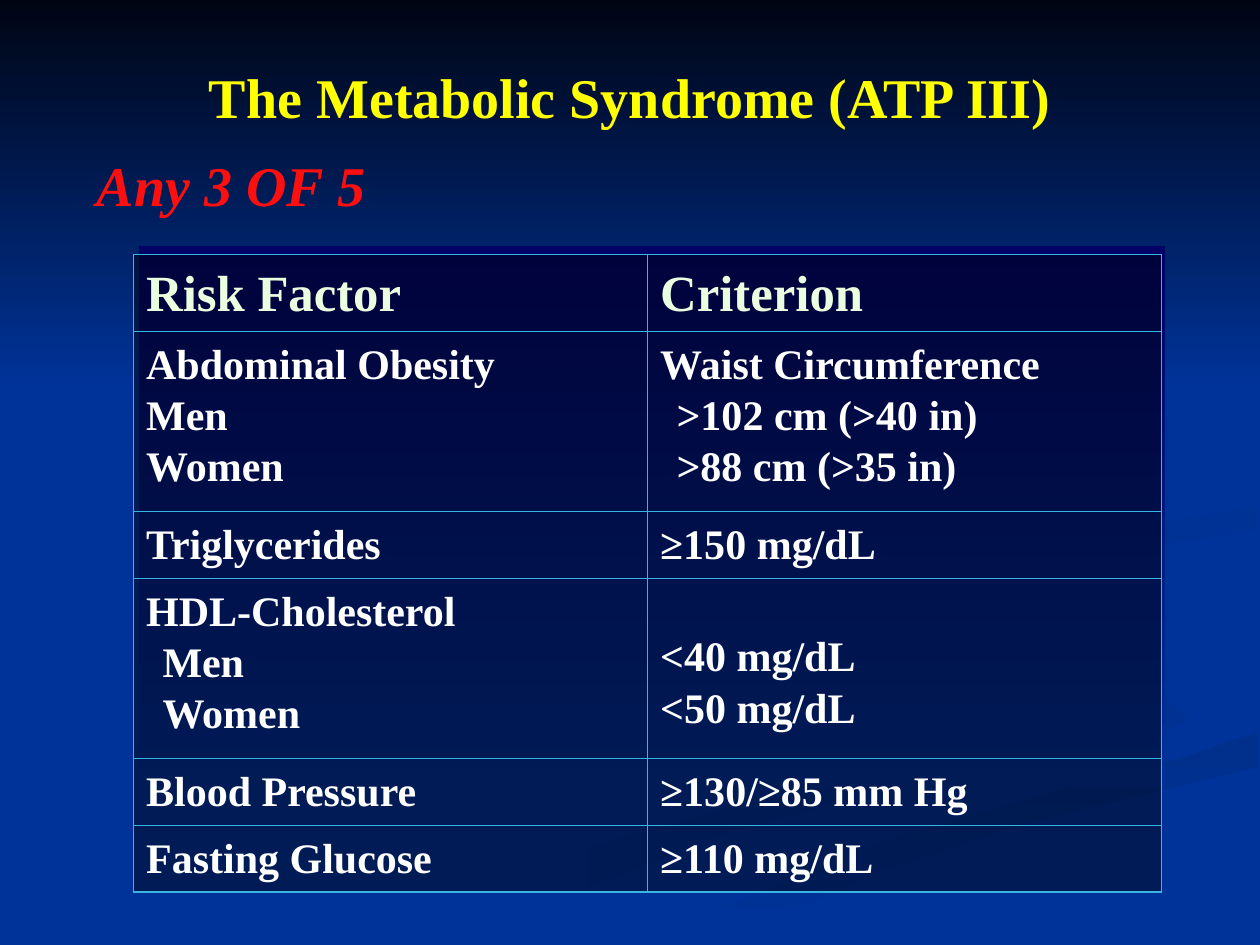
from lxml.etree import SubElement
from pptx import Presentation
from pptx.dml.color import RGBColor as Rgb
from pptx.enum.shapes import MSO_SHAPE as Shape
from pptx.enum.text import MSO_ANCHOR as Anchor, PP_ALIGN as Align
from pptx.oxml.ns import qn
from pptx.util import Pt

PX = 9144  # 100 px to the inch
FONT = "Times New Roman"
COLORS = {
    "blue": "003399", "blue_soft": "003193", "blue_mid": "003091",
    "blue_deep": "002F8C", "night": "000514", "navy": "000066",
    "border": "38B5E2", "header": "E9FFDF", "white": "FFFFFF",
    "yellow": "FFFF00", "red": "FD0F0F",
}

# Background ribbons: start colour, end colour, angle, outline
RIBBONS = [
    ("blue", "blue_soft", 0, [
        (781, 553), (575, 459), (783, 559), (739, 598), (458, 674),
        (300, 749), (361, 749), (564, 665), (780, 605), (800, 581)]),
    ("blue", "blue_soft", 45, [
        (943, 570), (905, 540), (758, 498), (724, 464), (755, 505),
        (880, 549), (918, 581), (894, 605), (932, 589)]),
    ("blue_deep", "blue", 90, [
        (503, 749), (571, 749), (695, 692), (821, 651), (998, 609),
        (998, 581), (936, 602), (764, 647), (630, 693)]),
    ("blue", "blue", 0, [
        (725, 464), (759, 498), (905, 540), (943, 570), (892, 605),
        (704, 655), (477, 749), (503, 749), (696, 669), (999, 581),
        (999, 538), (817, 492), (782, 460), (835, 430), (999, 402),
        (999, 387), (770, 427)]),
    ("blue_mid", "blue", 45, [
        (781, 460), (826, 496), (806, 468), (878, 439), (998, 420),
        (998, 402), (849, 427)]),
    ("blue_deep", "blue", 45, [
        (683, 430), (855, 391), (894, 344), (843, 275), (762, 233),
        (846, 279), (889, 335), (852, 374), (649, 420), (577, 462),
        (622, 500), (593, 470)]),
]

ROW_HEIGHTS = [61, 143, 53, 143, 53, 53]
RISK_ROWS = [
    ("Risk Factor", "Criterion"),
    ("Abdominal Obesity\nMen\nWomen",
     "Waist Circumference\n\t>102 cm (>40 in)\n\t>88 cm (>35 in)"),
    ("Triglycerides", "≥150 mg/dL"),
    ("HDL-Cholesterol\vMen\vWomen", "<40 mg/dL\n<50 mg/dL"),
    ("Blood Pressure", "≥130/≥85 mm Hg"),
    ("Fasting Glucose", "≥110 mg/dL"),
]


def rgb(name):
    return Rgb.from_string(COLORS[name])


class SlideBuilder:
    def __init__(self, slide):
        self.slide = slide
        self.shapes = slide.shapes

    def background(self, color):
        fill = self.slide.background.fill
        fill.solid()
        fill.fore_color.rgb = rgb(color)

    def paint(self, shape, start, end, angle):
        """Linear gradient with the angle measured clockwise; no outline."""
        shape.shadow.inherit = False
        shape.line.fill.background()
        shape.fill.gradient()
        shape.fill.gradient_angle = (360 - angle) % 360
        for stop, color in zip(shape.fill.gradient_stops, (start, end)):
            stop.color.rgb = rgb(color)

    def panel(self, box, start, end):
        panel = self.shapes.add_shape(Shape.RECTANGLE, *(v * PX for v in box))
        self.paint(panel, start, end, 90)

    def ribbon(self, start, end, angle, outline):
        builder = self.shapes.build_freeform(*outline[0], scale=PX)
        builder.add_line_segments(outline[1:], close=True)
        self.paint(builder.convert_to_shape(), start, end, angle)

    def style(self, paragraph, size, color, spacing, italic=None):
        font = paragraph.font
        font.name, font.size, font.bold, font.italic = FONT, Pt(size), True, italic
        font.color.rgb = rgb(color)
        paragraph.line_spacing = spacing

    def heading(self, text, box, color, spacing=1.0, italic=None, wrap=True):
        frame = self.shapes.add_textbox(*(v * PX for v in box)).text_frame
        frame.word_wrap = wrap
        frame.vertical_anchor = Anchor.MIDDLE if wrap else Anchor.TOP
        frame.text = text
        frame.paragraphs[0].alignment = Align.CENTER
        self.style(frame.paragraphs[0], 32, color, spacing, italic)

    def cell(self, cell, text, size, color):
        cell.text = text
        for paragraph in cell.text_frame.paragraphs:
            self.style(paragraph, size, color, 1.1)
            # Hanging indent: broken and tabbed lines start 13 px in
            props = paragraph._p.get_or_add_pPr()
            props.set("marL", str(13 * PX))
            props.set("indent", str(-13 * PX))

        props = cell._tc.get_or_add_tcPr()
        for side in ("a:lnL", "a:lnR", "a:lnT", "a:lnB"):
            border = SubElement(props, qn(side), w=str(Pt(1)))
            solid = SubElement(border, qn("a:solidFill"))
            SubElement(solid, qn("a:srgbClr"), val=COLORS["border"])
        # Half-transparent fill lets the panel shine through
        solid = SubElement(props, qn("a:solidFill"))
        shade = SubElement(solid, qn("a:srgbClr"), val=COLORS["night"])
        SubElement(shade, qn("a:alpha"), val="50000")

    def table(self, rows, heights, box):
        table = self.shapes.add_table(
            len(rows), len(rows[0]), *(v * PX for v in box)).table
        table.horz_banding = table.first_row = False
        for r, (texts, height) in enumerate(zip(rows, heights)):
            table.rows[r].height = height * PX
            size, color = (24, "white") if r else (29, "header")
            for c, text in enumerate(texts):
                self.cell(table.cell(r, c), text, size, color)
        return table


def main():
    deck = Presentation()
    deck.slide_width, deck.slide_height = 1000 * PX, 750 * PX
    page = SlideBuilder(deck.slides.add_slide(deck.slide_layouts[6]))

    # Backdrop
    page.background("blue")
    for ribbon in RIBBONS:
        page.ribbon(*ribbon)
    page.panel((0, 0, 1000, 308), "night", "blue")

    # Risk factor table on its panel
    page.panel((110, 195, 815, 430), "navy", "blue")
    risks = page.table(RISK_ROWS, ROW_HEIGHTS, (106, 202, 816, 508))
    # HDL limits stand level with Men and Women
    risks.cell(3, 1).margin_top = 41 * PX

    # Headings
    page.heading("The Metabolic Syndrome (ATP III)", (109, 39, 782, 74), "yellow")
    page.heading("Any 3 OF 5", (62, 125, 243, 54), "red",
                 spacing=0.8, italic=True, wrap=False)

    deck.save("out.pptx")


if __name__ == "__main__":
    main()
